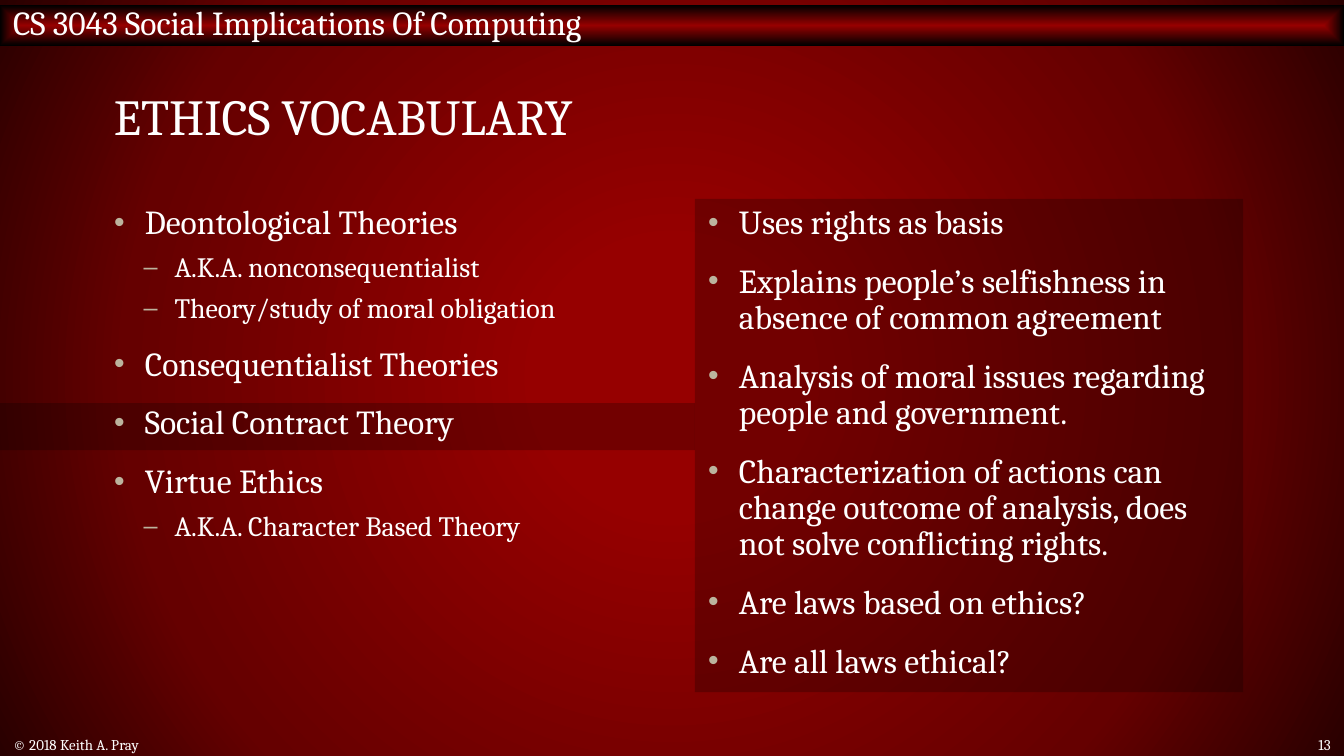
import pptx
import pptx.dml.color
import pptx.enum.shapes
import pptx.enum.text
import pptx.oxml
import pptx.oxml.ns
import pptx.util
from lxml import etree

Inches = pptx.util.Inches
Pt = pptx.util.Pt
qn = pptx.oxml.ns.qn
Anchor = pptx.enum.text.MSO_ANCHOR
Align = pptx.enum.text.PP_ALIGN


def color(hex_value):
    return pptx.dml.color.RGBColor.from_string(hex_value)


class SlideBuilder:
    FONT = "Cambria"
    BULLET_FONT = "Arial"
    TEXT = "FFFFFF"
    BULLET = "BCB49E"
    # level: bullet, text indent, size, space before
    LEVELS = {0: ("•", 0.23, 18, 12), 1: ("–", 0.45, 15, 6)}
    HANGING = 0.23

    def __init__(self, slide):
        self.slide = slide

    def path_gradient(self, fill, parent, stops, path):
        """Fill with a gradient that spreads from the centre."""
        fill.gradient()
        gradient = parent.find(".//" + qn("a:gradFill"))
        for child in list(gradient):
            gradient.remove(child)
        stop_list = etree.SubElement(gradient, qn("a:gsLst"))
        for position, hex_value in stops:
            stop = etree.SubElement(stop_list, qn("a:gs"), pos=str(position * 1000))
            etree.SubElement(stop, qn("a:srgbClr"), val=hex_value)
        path_element = etree.SubElement(gradient, qn("a:path"), path=path)
        etree.SubElement(path_element, qn("a:fillToRect"),
                         {side: "50000" for side in "ltrb"})

    def background(self, stops):
        self.path_gradient(self.slide.background.fill, self.slide.element, stops, "circle")

    def rectangle(self, left, top, width, height):
        shape = self.slide.shapes.add_shape(
            pptx.enum.shapes.MSO_SHAPE.RECTANGLE,
            Inches(left), Inches(top), Inches(width), Inches(height))
        shape.shadow.inherit = False
        shape.line.fill.background()
        return shape

    def shade(self, left, top, width, height, hex_value="000000", alpha=24):
        shape = self.rectangle(left, top, width, height)
        shape.fill.solid()
        shape.fill.fore_color.rgb = color(hex_value)
        solid_color = shape.element.spPr.find(".//" + qn("a:srgbClr"))
        etree.SubElement(solid_color, qn("a:alpha"), val=str(alpha * 1000))

    def header(self, left, top, width, height, text, stops):
        shape = self.rectangle(left, top, width, height)
        self.path_gradient(shape.fill, shape.element.spPr, stops, "shape")
        frame = self.frame(shape, Anchor.MIDDLE)
        frame.margin_top = 0
        paragraph = frame.paragraphs[0]
        paragraph.alignment = Align.LEFT
        self.run(paragraph, text, 18)

    def frame(self, shape, anchor):
        frame = shape.text_frame
        frame.word_wrap = True
        frame.vertical_anchor = anchor
        return frame

    def run(self, paragraph, text, size):
        run = paragraph.add_run()
        run.text = text
        run.font.name = self.FONT
        run.font.size = Pt(size)
        run.font.color.rgb = color(self.TEXT)

    def text_box(self, left, top, width, height, anchor):
        shape = self.slide.shapes.add_textbox(
            Inches(left), Inches(top), Inches(width), Inches(height))
        return self.frame(shape, anchor)

    def label(self, left, top, width, height, text, size,
              alignment=Align.LEFT, line_spacing=1.0):
        paragraph = self.text_box(left, top, width, height, Anchor.MIDDLE).paragraphs[0]
        paragraph.alignment = alignment
        paragraph.line_spacing = line_spacing
        self.run(paragraph, text, size)

    def bullet_list(self, left, top, width, height, items):
        frame = self.text_box(left, top, width, height, Anchor.TOP)
        for index, (level, text) in enumerate(items):
            bullet, indent, size, space_before = self.LEVELS[level]
            paragraph = frame.add_paragraph() if index else frame.paragraphs[0]
            properties = paragraph._p.get_or_add_pPr()
            properties.set("marL", str(Inches(indent)))
            properties.set("indent", str(-Inches(self.HANGING)))
            bullet_color = etree.SubElement(properties, qn("a:buClr"))
            etree.SubElement(bullet_color, qn("a:srgbClr"), val=self.BULLET)
            etree.SubElement(properties, qn("a:buSzPct"), val="90000")
            etree.SubElement(properties, qn("a:buFont"), typeface=self.BULLET_FONT)
            etree.SubElement(properties, qn("a:buChar"), char=bullet)
            paragraph.level = level
            paragraph.line_spacing = 0.9
            paragraph.space_before = Pt(space_before if index else 0)
            self.run(paragraph, text, size)


THEORIES = [
    (0, "Deontological Theories"),
    (1, "A.K.A. nonconsequentialist"),
    (1, "Theory/study of moral obligation"),
    (0, "Consequentialist Theories"),
    (0, "Social Contract Theory"),
    (0, "Virtue Ethics"),
    (1, "A.K.A. Character Based Theory"),
]
CONTRACT_NOTES = [
    (0, "Uses rights as basis"),
    (0, "Explains people’s selfishness in absence of common agreement"),
    (0, "Analysis of moral issues regarding people and government."),
    (0, "Characterization of actions can change outcome of analysis, "
        "does not solve conflicting rights."),
    (0, "Are laws based on ethics?"),
    (0, "Are all laws ethical?"),
]


def main():
    # Widescreen 16:9 slide
    presentation = pptx.Presentation()
    presentation.slide_width = Inches(10)
    presentation.slide_height = Inches(10 * 9 / 16)
    builder = SlideBuilder(presentation.slides.add_slide(presentation.slide_layouts[6]))

    # Background and course header
    builder.background([(17, "960000"), (71, "650000"), (100, "290000")])
    builder.header(0, 0.04, 10, 0.3, "CS 3043 Social Implications Of Computing",
                   [(0, "960000"), (100, "000000")])

    # Shading that ties the highlighted theory to its notes
    notes_area = (5.17, 1.48, 4.08, 3.67)
    builder.shade(0, 3, 5.17, 0.35)
    builder.shade(*notes_area)

    # Title and the two columns
    builder.label(0.75, 0.4, 8.5, 1, "ETHICS VOCABULARY", 27, line_spacing=0.8)
    builder.bullet_list(0.75, 1.48, 4.08, 3.67, THEORIES)
    builder.bullet_list(*notes_area, CONTRACT_NOTES)

    # Footer
    builder.label(0, 5.46, 6.08, 0.16, "© 2018 Keith A. Pray", 8)
    builder.label(9.32, 5.46, 0.68, 0.16, "13", 8, Align.RIGHT)

    presentation.save("out.pptx")


if __name__ == "__main__":
    main()
